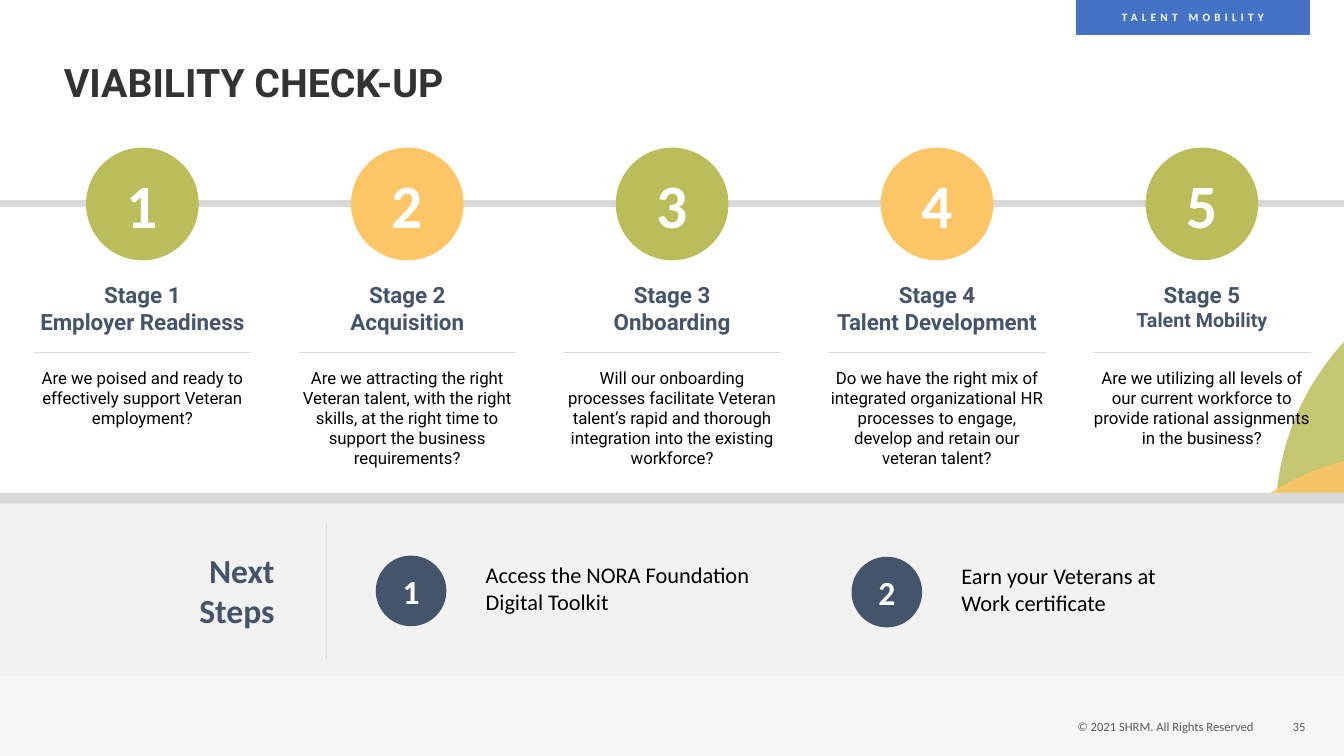
from typing import NamedTuple

from lxml import etree
from pptx import Presentation
from pptx.dml.color import RGBColor
from pptx.enum.shapes import MSO_CONNECTOR, MSO_SHAPE
from pptx.enum.text import MSO_ANCHOR, PP_ALIGN
from pptx.oxml.ns import qn
from pptx.util import Cm, Pt

RECT, OVAL = MSO_SHAPE.RECTANGLE, MSO_SHAPE.OVAL
STRAIGHT = MSO_CONNECTOR.STRAIGHT
LEFT, CENTER, RIGHT = PP_ALIGN.LEFT, PP_ALIGN.CENTER, PP_ALIGN.RIGHT
TOP, MIDDLE = MSO_ANCHOR.TOP, MSO_ANCHOR.MIDDLE

GREEN, ORANGE, NAVY, BLUE = "BABD59", "FCC566", "44546A", "4472C4"
WHITE, BLACK, CHARCOAL, GREY = "FFFFFF", "000000", "333333", "595959"
RULE, BAND = "D9D9D9", "F2F2F2"
HEADING_FONT, PLAIN_FONT = "Roboto", "Calibri"

# Measures in centimetres
SLIDE_W, SLIDE_H = 33.87, 19.05
FIRST_CENTER, LAST_CENTER, COLUMN_W = 3.59, 30.29, 5.48
TIMELINE_Y, STAGE_TOP, STAGE_CIRCLE = 5.13, 3.72, 2.84
BAND_TOP, FOOTER_TOP, STEP_CIRCLE = 12.42, 16.48, 1.78


class Box(NamedTuple):
    left: float
    top: float
    width: float
    height: float


class Stage(NamedTuple):
    name: str
    question: str
    color: str
    name_size: float = 16


class Step(NamedTuple):
    text: str
    left: float
    top: float
    text_width: float


class Leaf(NamedTuple):
    color: str
    start: tuple
    segments: list  # one point is a line, three points are a Bézier curve


STAGES = [
    Stage("Employer Readiness",
          "Are we poised and ready to effectively support Veteran employment?", GREEN),
    Stage("Acquisition",
          "Are we attracting the right Veteran talent, with the right skills, "
          "at the right time to support the business requirements?", ORANGE),
    Stage("Onboarding",
          "Will our onboarding processes facilitate Veteran talent’s rapid and "
          "thorough integration into the existing workforce?", GREEN),
    Stage("Talent Development",
          "Do we have the right mix of integrated organizational HR processes "
          "to engage, develop and retain our veteran talent?", ORANGE),
    Stage("Talent Mobility",
          "Are we utilizing all levels of our current workforce to provide "
          "rational assignments in the business?", GREEN, 14),
]
STAGE_PITCH = (LAST_CENTER - FIRST_CENTER) / (len(STAGES) - 1)
STEPS = [
    Step("Access the NORA Foundation Digital Toolkit", 9.47, 14.0, 7.62),
    Step("Earn your Veterans at Work certificate", 21.46, 14.03, 5.49),
]
LEAVES = [
    Leaf(GREEN, (36.37, 9.75), [
        [(33.96, 8.53)], [(33.76, 8.74)],
        [(31.67, 11.13), (31.65, 14.58), (33.48, 17.02)],
        [(33.83, 17.42)], [(35.1, 14.91)], [(35.05, 14.81)],
        [(34.37, 13.41), (34.54, 11.66), (35.66, 10.39)],
        [(35.81, 10.19), (36.02, 10.03), (36.2, 9.88)]]),
    Leaf(ORANGE, (35.81, 13.89), [
        [(34.82, 11.46)], [(34.57, 11.48)],
        [(31.52, 11.91), (29.29, 14.4), (29.08, 17.35)],
        [(29.08, 17.88)], [(31.62, 16.84)], [(31.65, 16.76)],
        [(32.03, 15.29), (33.27, 14.12), (34.9, 13.89)],
        [(35.13, 13.87), (35.38, 13.87), (35.61, 13.87)]]),
]


def rgb(color: str) -> RGBColor:
    return RGBColor.from_string(color)


def paint(shape, color: str, opacity: int = 100) -> None:
    shape.shadow.inherit = False
    shape.fill.solid()
    shape.fill.fore_color.rgb = rgb(color)
    shape.line.fill.background()
    if opacity < 100:
        fill_color = shape._element.spPr.find(qn("a:solidFill")).find(qn("a:srgbClr"))
        etree.SubElement(fill_color, qn("a:alpha"), val=str(opacity * 1000))


def add_block(slide, kind, box: Box, color: str, opacity: int = 100):
    block = slide.shapes.add_shape(kind, *map(Cm, box))
    paint(block, color, opacity)
    return block


def add_rule(slide, start: tuple, end: tuple, weight: float = 0.5) -> None:
    rule = slide.shapes.add_connector(STRAIGHT, *map(Cm, start + end))
    rule.line.color.rgb = rgb(RULE)
    rule.line.width = Pt(weight)
    etree.SubElement(rule._element.spPr, qn("a:effectLst"))


def write(shape, text: str, *, size: float, color: str, font: str = PLAIN_FONT,
          bold: bool = False, align=CENTER, anchor=MIDDLE, last_size: float = 0,
          line_spacing: float = 1, tracking: float = 0) -> None:
    """Fill a shape with one paragraph per line of text."""
    frame = shape.text_frame
    frame.word_wrap = True
    frame.vertical_anchor = anchor
    frame.margin_left = frame.margin_right = frame.margin_top = frame.margin_bottom = 0
    lines = text.split("\n")
    for index, line in enumerate(lines):
        paragraph = frame.add_paragraph() if index else frame.paragraphs[0]
        paragraph.alignment = align
        paragraph.line_spacing = line_spacing
        run = paragraph.add_run()
        run.text = line
        run.font.name = font
        is_last = index == len(lines) - 1
        run.font.size = Pt(last_size if last_size and is_last else size)
        run.font.bold = bold
        run.font.color.rgb = rgb(color)
        if tracking:
            run._r.get_or_add_rPr().set("spc", str(int(tracking * 100)))


def add_text(slide, text: str, box: Box, **text_format) -> None:
    write(slide.shapes.add_textbox(*map(Cm, box)), text, **text_format)


def add_leaf(slide, leaf: Leaf) -> None:
    points = [(Cm(x), Cm(y)) for segment in leaf.segments for x, y in segment]
    builder = slide.shapes.build_freeform(*map(Cm, leaf.start))
    builder.add_line_segments(points, close=True)
    shape = builder.convert_to_shape()
    paint(shape, leaf.color, 85)
    # Turn each run of three control points into one curve
    vertices = iter(list(shape._element.iter(qn("a:lnTo"))))
    for segment in leaf.segments:
        first, *others = [next(vertices) for _ in segment]
        if others:
            first.tag = qn("a:cubicBezTo")
            for vertex in others:
                first.append(vertex[0])
                vertex.getparent().remove(vertex)


def add_badge(slide, number: int, left: float, top: float, diameter: float,
              color: str, size: float) -> None:
    add_block(slide, OVAL, Box(left, top, diameter, diameter), color)
    label_box = Box(left + diameter * 0.1, top + diameter * 0.22, diameter * 0.8, diameter * 0.56)
    label = add_block(slide, RECT, label_box, color)
    write(label, str(number), size=size, color=WHITE, bold=True)


def add_stage(slide, number: int, stage: Stage) -> None:
    center = FIRST_CENTER + (number - 1) * STAGE_PITCH
    left = center - COLUMN_W / 2
    add_badge(slide, number, center - STAGE_CIRCLE / 2, STAGE_TOP, STAGE_CIRCLE, stage.color, 44)
    add_text(slide, f"Stage {number}\n{stage.name}", Box(left, 7.09, COLUMN_W, 1.37), size=16,
             last_size=stage.name_size, color=NAVY, font=HEADING_FONT, bold=True, anchor=TOP)
    add_rule(slide, (left, 8.87), (left + COLUMN_W, 8.87))
    add_text(slide, stage.question, Box(left, 9.26, COLUMN_W, 2.67), size=12,
             color=BLACK, font=HEADING_FONT, anchor=TOP)


def add_step(slide, number: int, step: Step) -> None:
    add_badge(slide, number, step.left, step.top, STEP_CIRCLE, NAVY, 24)
    add_text(slide, step.text, Box(step.left + 2.77, step.top - 0.07, step.text_width, STEP_CIRCLE),
             size=16, color=BLACK, align=LEFT)


def main() -> None:
    deck = Presentation()
    deck.slide_width, deck.slide_height = Cm(SLIDE_W), Cm(SLIDE_H)
    slide = deck.slides.add_slide(deck.slide_layouts[6])

    # Backdrop and footer
    for leaf in LEAVES:
        add_leaf(slide, leaf)
    footer_box = Box(0, FOOTER_TOP, SLIDE_W, SLIDE_H - FOOTER_TOP)
    for color, opacity in ((WHITE, 100), (BAND, 60)):
        add_block(slide, RECT, footer_box, color, opacity)
    add_text(slide, "35", Box(31.81, 17.52, 1.09, 1.57), size=9, color=GREY, align=RIGHT)
    add_text(slide, "© 2021 SHRM. All Rights Reserved", Box(26.93, 17.72, 4.88, 1.17),
             size=9, color=GREY)

    # Title and section tag
    add_text(slide, "VIABILITY CHECK-UP", Box(1.61, 1.04, 29.57, 2.21), size=28, color=CHARCOAL,
             font=HEADING_FONT, bold=True, align=LEFT, line_spacing=0.9)
    section_tag = add_block(slide, RECT, Box(27.12, 0, 5.89, 0.88), BLUE)
    write(section_tag, "TALENT MOBILITY", size=8, color=WHITE, bold=True, tracking=3)

    # Stages on the timeline
    add_rule(slide, (0, TIMELINE_Y), (SLIDE_W, TIMELINE_Y), 5)
    for number, stage in enumerate(STAGES, 1):
        add_stage(slide, number, stage)

    # Next steps band
    add_block(slide, RECT, Box(0, BAND_TOP, SLIDE_W, 4.62), BAND)
    add_block(slide, RECT, Box(0, BAND_TOP, SLIDE_W, 0.27), RULE)
    add_rule(slide, (8.23, 13.21), (8.23, 16.61))
    add_text(slide, "Next\nSteps", Box(4.15, 13.85, 2.77, 2.06), size=24, color=NAVY,
             bold=True, align=RIGHT, anchor=TOP)
    for number, step in enumerate(STEPS, 1):
        add_step(slide, number, step)

    deck.save("out.pptx")


if __name__ == "__main__":
    main()
